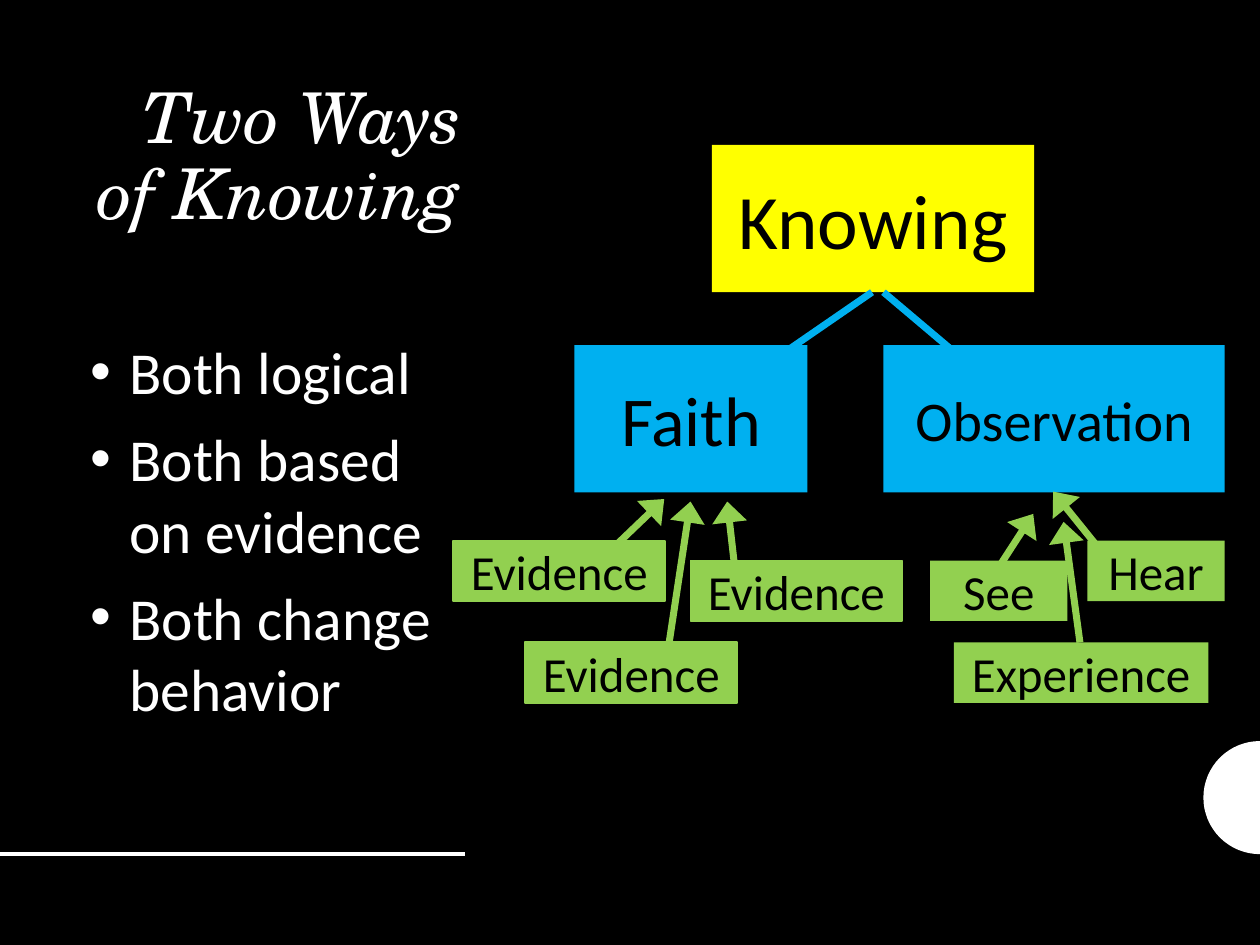
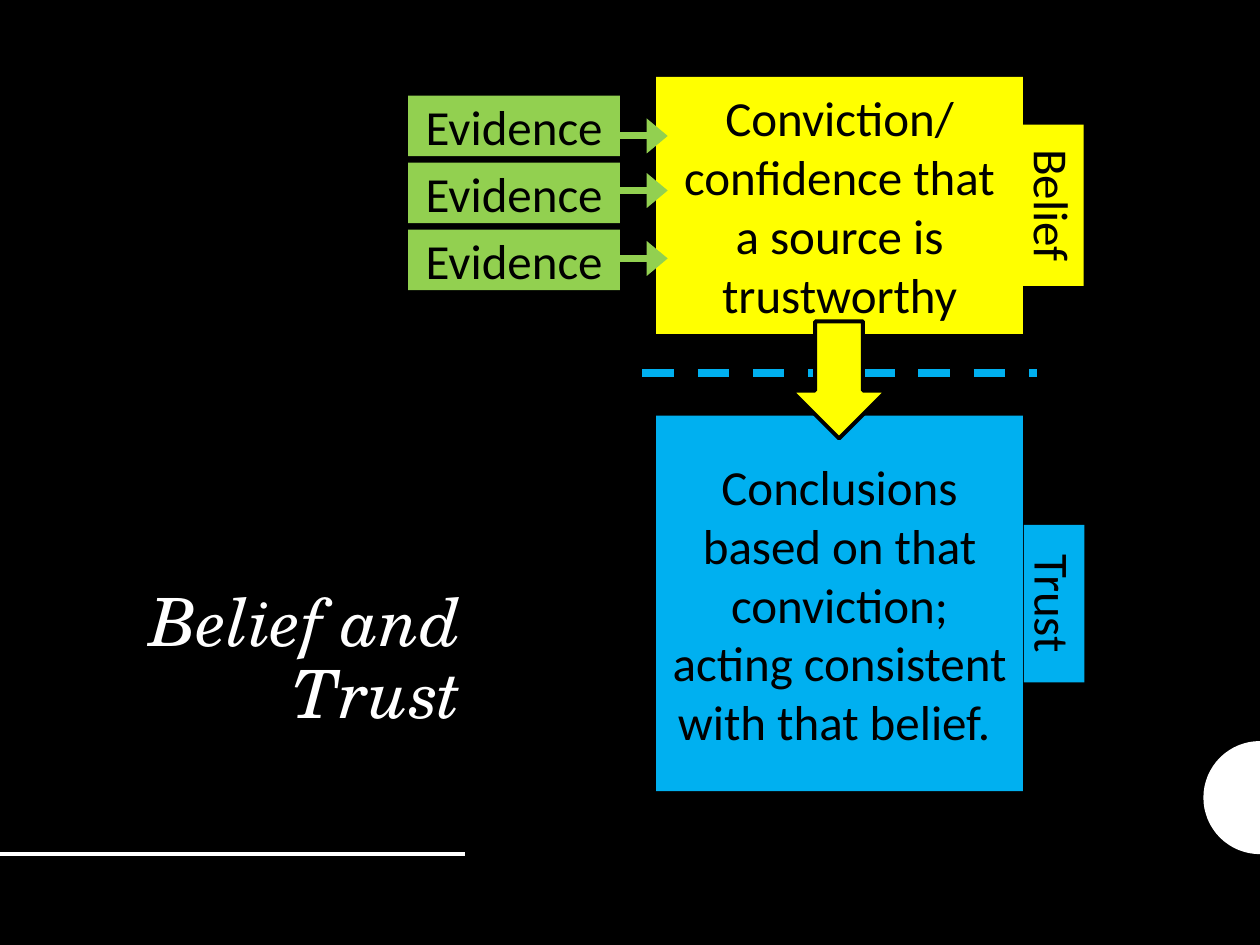
from math import cos, pi, sin

from lxml.etree import SubElement
from pptx import Presentation
from pptx.dml.color import RGBColor
from pptx.enum.dml import MSO_LINE
from pptx.enum.shapes import MSO_CONNECTOR, MSO_SHAPE
from pptx.enum.text import MSO_ANCHOR, PP_ALIGN
from pptx.oxml.ns import qn
from pptx.util import Cm, Pt

BLACK, WHITE = "000000", "FFFFFF"
YELLOW, BLUE, GREEN = "FFFF00", "00B0F0", "92D050"
TITLE_FONT, BODY_FONT = "TeX Gyre Schola", "Calibri"
MARGIN, TITLE_WIDTH = 1.57, 7.98
LABEL_WIDTH, LABEL_HEIGHT = 4.27, 1.22


def color(hex_string):
    return RGBColor.from_string(hex_string)


class Deck:
    """Holds the presentation, its style and the slide being filled."""

    def __init__(self):
        self.presentation = Presentation()
        self.presentation.slide_width = Cm(25.4)
        self.presentation.slide_height = Cm(19.05)
        self.slide = None

    def new_slide(self):
        """Start a black slide with the half disc and the rule at the foot."""
        self.slide = self.presentation.slides.add_slide(self.presentation.slide_layouts[6])
        background = self.slide.background.fill
        background.solid()
        background.fore_color.rgb = color(BLACK)
        self.half_disc(25.4, 16.08, 1.14)
        self.line((0, 17.22), (9.37, 17.22), WHITE, 2)

    def half_disc(self, center_x, center_y, radius, steps=32):
        angles = [pi / 2 + pi * step / steps for step in range(steps + 1)]
        rim = [(Cm(center_x + radius * cos(a)), Cm(center_y + radius * sin(a))) for a in angles]
        outline = self.slide.shapes.build_freeform(*rim[0])
        outline.add_line_segments(rim[1:], close=True)
        self.paint(outline.convert_to_shape(), WHITE)

    def paint(self, shape, fill, outline=None, outline_width=1):
        shape.shadow.inherit = False
        shape.fill.solid()
        shape.fill.fore_color.rgb = color(fill)
        if outline:
            shape.line.color.rgb = color(outline)
            shape.line.width = Pt(outline_width)
        else:
            shape.line.fill.background()

    def add_text(self, paragraph, text, size, ink, font=BODY_FONT, italic=False):
        run = paragraph.add_run()
        run.text = text
        run.font.size = Pt(size)
        run.font.name = font
        run.font.italic = italic
        run.font.color.rgb = color(ink)

    def text_frame(self, left, top, width, height):
        frame = self.slide.shapes.add_textbox(Cm(left), Cm(top), Cm(width), Cm(height)).text_frame
        frame.word_wrap = True
        return frame

    def title(self, text, top, height, size):
        paragraph = self.text_frame(MARGIN, top, TITLE_WIDTH, height).paragraphs[0]
        paragraph.alignment = PP_ALIGN.RIGHT
        paragraph.line_spacing = 0.9
        self.add_text(paragraph, text, size, WHITE, TITLE_FONT, italic=True)

    def bullets(self, points, top, height, size=34):
        frame = self.text_frame(MARGIN, top, 7.9, height)
        for index, point in enumerate(points):
            paragraph = frame.add_paragraph() if index else frame.paragraphs[0]
            paragraph.space_before = Pt(9)
            self.add_text(paragraph, point, size, WHITE)
            properties = paragraph._p.get_or_add_pPr()
            properties.set("marL", str(Cm(0.79)))
            properties.set("indent", str(-Cm(0.79)))
            SubElement(properties, qn("a:buFont")).set("typeface", "Arial")
            SubElement(properties, qn("a:buChar")).set("char", "•")

    def box(self, text, left, top, width, height, fill, size=28, outline=None, rotation=0):
        box = self.slide.shapes.add_shape(
            MSO_SHAPE.RECTANGLE, Cm(left), Cm(top), Cm(width), Cm(height))
        self.paint(box, fill, outline)
        box.rotation = rotation
        frame = box.text_frame
        frame.word_wrap = True
        frame.vertical_anchor = MSO_ANCHOR.MIDDLE
        frame.paragraphs[0].alignment = PP_ALIGN.CENTER
        self.add_text(frame.paragraphs[0], text, size, BLACK)

    def label(self, text, left, top, width=LABEL_WIDTH, outline=None):
        self.box(text, left, top, width, LABEL_HEIGHT, GREEN, outline=outline)

    def down_arrow(self, left, top, width, height):
        arrow = self.slide.shapes.add_shape(
            MSO_SHAPE.DOWN_ARROW, Cm(left), Cm(top), Cm(width), Cm(height))
        self.paint(arrow, YELLOW, BLACK, 2.25)

    def line(self, start, end, ink, width=4, dash=None):
        connector = self.slide.shapes.add_connector(
            MSO_CONNECTOR.STRAIGHT, *map(Cm, start + end))
        connector.line.color.rgb = color(ink)
        connector.line.width = Pt(width)
        if dash:
            connector.line.dash_style = dash
        SubElement(connector._element.spPr, qn("a:effectLst"))
        return connector

    def arrow(self, start, end):
        stroke = self.line(start, end, GREEN).line._get_or_add_ln()
        head = SubElement(stroke, qn("a:tailEnd"))
        head.set("type", "triangle")
        head.set("w", "lg")


def two_ways_of_knowing(deck):
    deck.new_slide()
    deck.title("Two Ways of Knowing", 1.55, 13.77, 40)

    deck.box("Knowing", 14.35, 2.92, 6.5, 2.97, YELLOW, 44)
    deck.box("Faith", 11.58, 6.96, 4.7, 2.97, BLUE, 40)
    deck.box("Observation", 17.81, 6.96, 6.88, 2.97, BLUE, 32)
    deck.line((15.88, 7.06), (17.58, 5.89), BLUE)
    deck.line((19.23, 7.09), (17.81, 5.89), BLUE)

    high, middle, low = 10.9, 11.3, 12.95
    for left, top in ((9.14, high), (10.59, low), (13.92, middle)):
        deck.label("Evidence", left, top, outline=GREEN)
    deck.label("See", 18.75, middle, 2.77)
    deck.label("Experience", 19.23, low, 5.13)
    deck.label("Hear", 21.92, high, 2.77)

    observation_arrows = (
        ((22.23, 11.15), (21.23, 9.91)),
        ((21.77, low), (21.44, 10.52)),
        ((20.02, 11.61), (20.83, 10.36)),
    )
    faith_arrows = (
        ((12.22, 11.18), (13.39, 10.06)),
        ((14.81, 11.43), (14.66, 10.11)),
        ((13.49, low), (13.92, 10.11)),
    )
    for start, end in observation_arrows + faith_arrows:
        deck.arrow(start, end)

    deck.bullets(("Both logical", "Both based on evidence", "Both change behavior"), 6.63, 8.46)


def belief_and_trust(deck):
    deck.new_slide()
    deck.box("Conviction/ confidence that a source is trustworthy",
             13.23, 1.55, 7.39, 5.18, YELLOW)
    deck.box("Conclusions based on that conviction; acting consistent with that belief. ",
             13.23, 8.38, 7.39, 7.57, BLUE)
    deck.line((12.95, 7.52), (20.9, 7.52), BLUE, 4.5, MSO_LINE.DASH)
    deck.down_arrow(15.95, 6.48, 1.93, 2.36)
    deck.title("Belief and Trust", 11.76, 3.53, 38)

    for row in range(3):
        deck.label("Evidence", 8.23, 1.93 + 1.35 * row)
    deck.box("Belief", 19.61, 3.53, 3.25, LABEL_HEIGHT, YELLOW, rotation=90)
    deck.box("Trust", 19.66, 11.56, 3.18, LABEL_HEIGHT, BLUE, rotation=90)
    for height in (2.74, 3.84, 5.21):
        deck.arrow((12.4, height), (13.46, height))


def main():
    deck = Deck()
    two_ways_of_knowing(deck)
    belief_and_trust(deck)
    deck.presentation.save("out.pptx")


if __name__ == "__main__":
    main()
